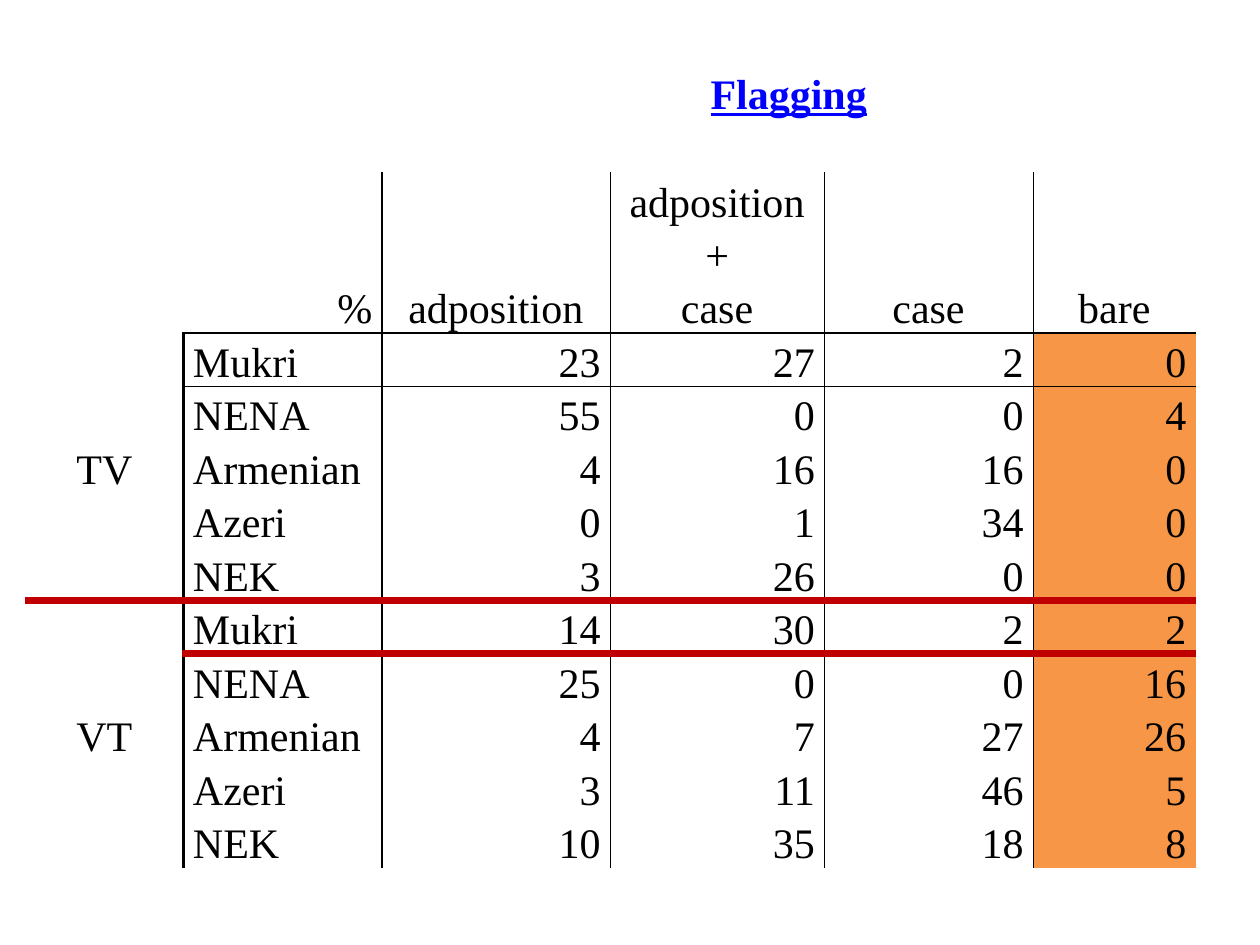
import pptx
import pptx.util
import pptx.oxml
import pptx.oxml.ns
import pptx.enum.text
import pptx.dml.color

Pt = pptx.util.Pt
ALIGN = pptx.enum.text.PP_ALIGN
ANCHOR = pptx.enum.text.MSO_ANCHOR

TITLE = "Flagging"
HEADS = [["%"], ["adposition"], ["adposition+", "case"], ["case"], ["bare"]]
NAMES = ["Mukri", "NENA", "Armenian", "Azeri", "NEK"]
GROUPS = {
    "TV": [(23, 27, 2, 0), (55, 0, 0, 4), (4, 16, 16, 0), (0, 1, 34, 0), (3, 26, 0, 0)],
    "VT": [(14, 30, 2, 2), (25, 0, 0, 16), (4, 7, 27, 26), (3, 11, 46, 5), (10, 35, 18, 8)],
}
THEME = {
    "font": "Times New Roman", "size": 24, "lead": 1.15,
    "ink": "000000", "link": "0000FF", "rule": "C00000",
    "plain": "FFFFFF", "mark": "F79646",
}
LEFT, TOP = 14.4, 37.44
COLS = [90.5, 113.3, 130.4, 122.4, 119.3, 93]
LINE = 30.56
START = 2
STEP = len(NAMES)
ROWS = [2 * LINE, 3 * LINE] + [LINE] * (STEP * len(GROUPS))
UPRIGHT = {0: 2.25, 1: 1, 2: 0.5, 3: 0.5, 4: 0.5}
STYLE = "{2D5ABB26-0587-4C30-8999-92F81FD0307C}"


def color(key):
    return pptx.dml.color.RGBColor.from_string(THEME[key])


def write(cell, lines, align, anchor=ANCHOR.BOTTOM, ink="ink", strong=False):
    cell.vertical_anchor = anchor
    frame = cell.text_frame
    for i, line in enumerate(lines):
        para = frame.add_paragraph() if i else frame.paragraphs[0]
        para.alignment = align
        para.line_spacing = THEME["lead"]
        run = para.add_run()
        run.text = line
        font = run.font
        font.name, font.size = THEME["font"], Pt(THEME["size"])
        font.bold = font.underline = strong
        font.color.rgb = color(ink)


def upright(row, col):
    first = START if col == 0 else 1
    return (UPRIGHT[col], "ink") if row >= first and col in UPRIGHT else None


def level(row, col):
    if row == START - 1 and col > 0:
        return 1, "ink"
    if row == START + STEP - 1:
        return 4.5, "rule"
    return None


def border(cell, row, col):
    last = row + cell.span_height - 1 if cell.is_merge_origin else row
    sides = [("L", upright(row, col - 1)), ("R", upright(row, col)),
             ("T", level(row - 1, col)), ("B", level(last, col))]
    props = cell._tc.get_or_add_tcPr()
    space = pptx.oxml.ns.nsdecls("a")
    drawn = [(side, edge) for side, edge in sides if edge]
    for i, (side, (width, key)) in enumerate(drawn):
        props.insert(i, pptx.oxml.parse_xml(
            f'<a:ln{side} {space} w="{int(Pt(width))}"><a:solidFill>'
            f'<a:srgbClr val="{THEME[key]}"/></a:solidFill></a:ln{side}>'))


def fill(table):
    table.cell(0, 0).merge(table.cell(1, 0))
    title = table.cell(0, 2)
    title.merge(table.cell(0, 5))
    write(title, [TITLE], ALIGN.CENTER, ANCHOR.TOP, "link", True)
    for col, lines in enumerate(HEADS, 1):
        write(table.cell(1, col), lines, ALIGN.RIGHT if col == 1 else ALIGN.CENTER)
    for g, (group, data) in enumerate(GROUPS.items()):
        top = START + g * STEP
        label = table.cell(top, 0)
        label.merge(table.cell(top + STEP - 1, 0))
        write(label, [group], ALIGN.CENTER, ANCHOR.MIDDLE)
        for row, (name, values) in enumerate(zip(NAMES, data), top):
            write(table.cell(row, 1), [name], ALIGN.JUSTIFY)
            for col, value in enumerate(values, 2):
                write(table.cell(row, col), [str(value)], ALIGN.RIGHT)


def dress(table):
    for row in range(len(ROWS)):
        for col in range(len(COLS)):
            cell = table.cell(row, col)
            cell.margin_left = cell.margin_right = Pt(5.4)
            cell.margin_top = cell.margin_bottom = 0
            if row >= START and col >= 2:
                cell.fill.solid()
                cell.fill.fore_color.rgb = color("mark" if col == 5 else "plain")
            else:
                cell.fill.background()
            border(cell, row, col)


def main():
    """Build the slide with the flagging table."""
    deck = pptx.Presentation()
    deck.slide_width, deck.slide_height = Pt(720), Pt(540)
    slide = deck.slides.add_slide(deck.slide_layouts[6])
    frame = slide.shapes.add_table(len(ROWS), len(COLS), Pt(LEFT), Pt(TOP),
                                   Pt(sum(COLS)), Pt(sum(ROWS)))
    table = frame.table
    table.first_row = table.horz_banding = False
    table._tbl.tblPr.find(pptx.oxml.ns.qn("a:tableStyleId")).text = STYLE
    for col, width in zip(table.columns, COLS):
        col.width = Pt(width)
    for row, height in zip(table.rows, ROWS):
        row.height = Pt(height)
    fill(table)
    dress(table)
    deck.save("out.pptx")


if __name__ == "__main__":
    main()
